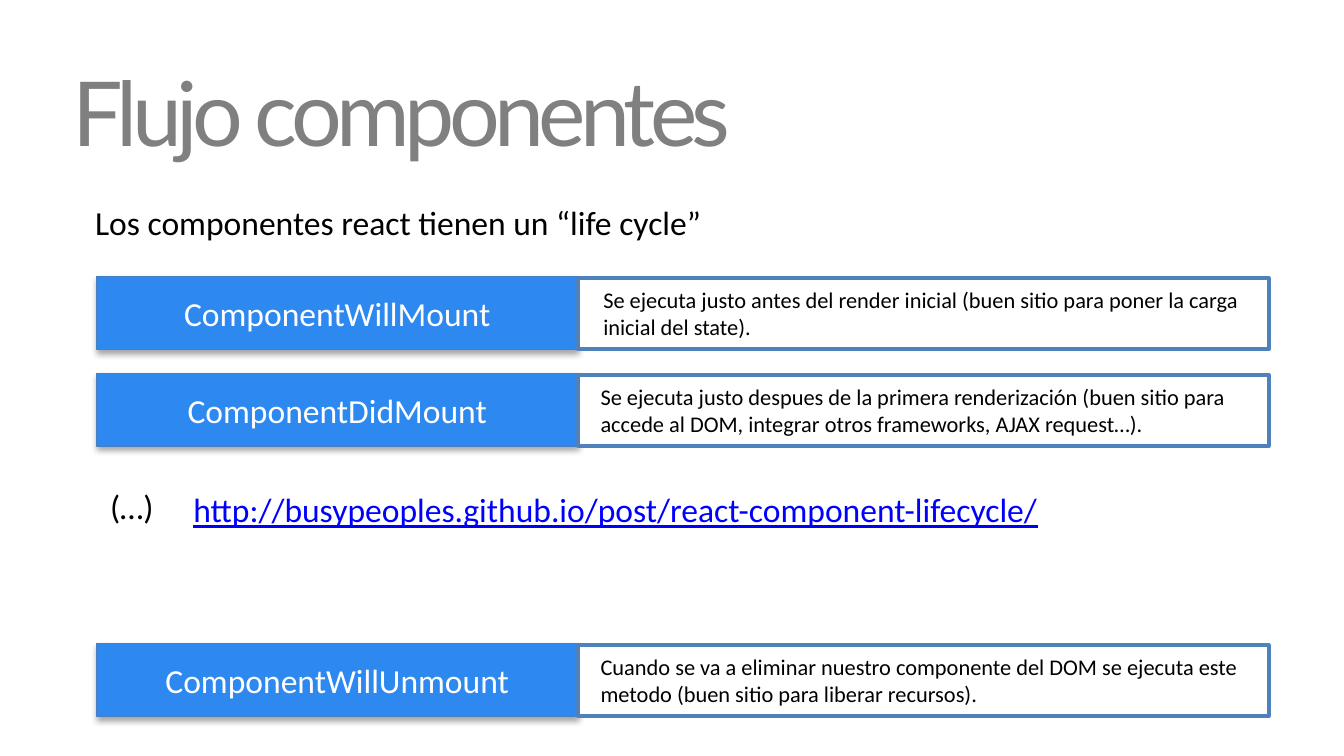
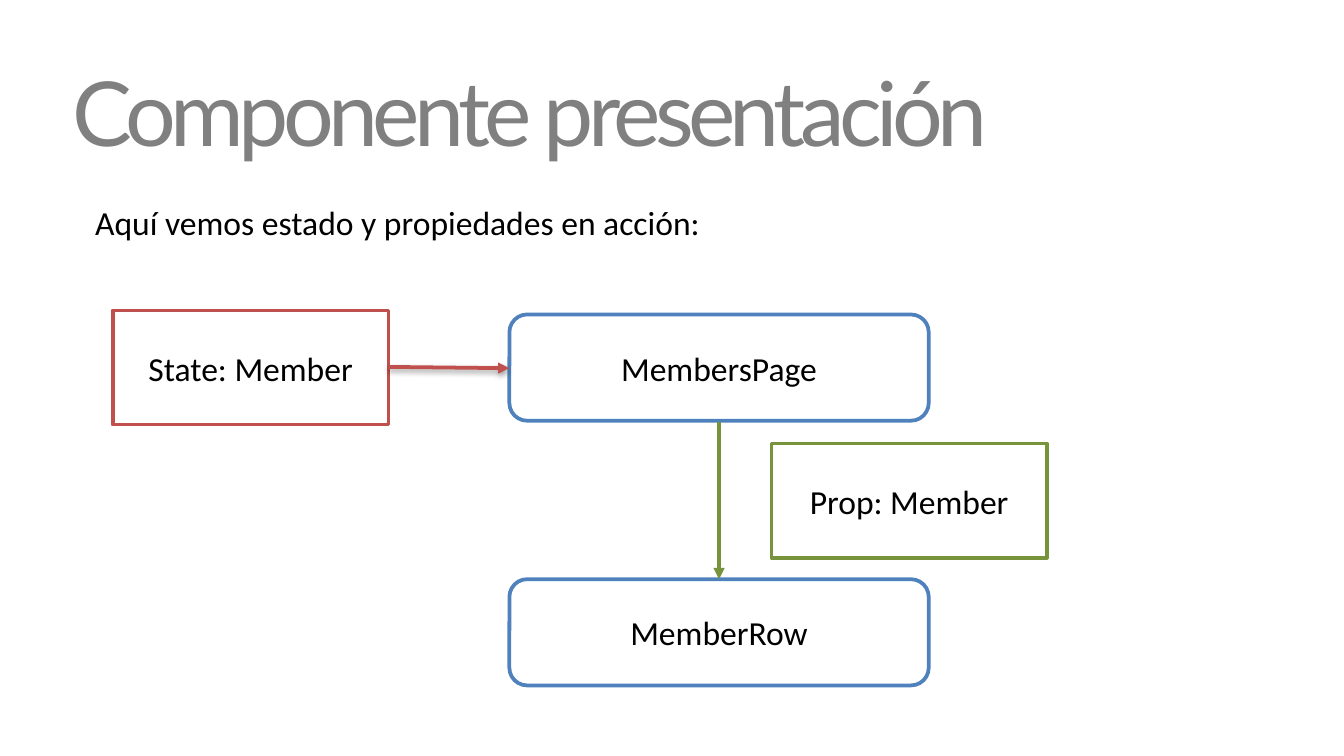
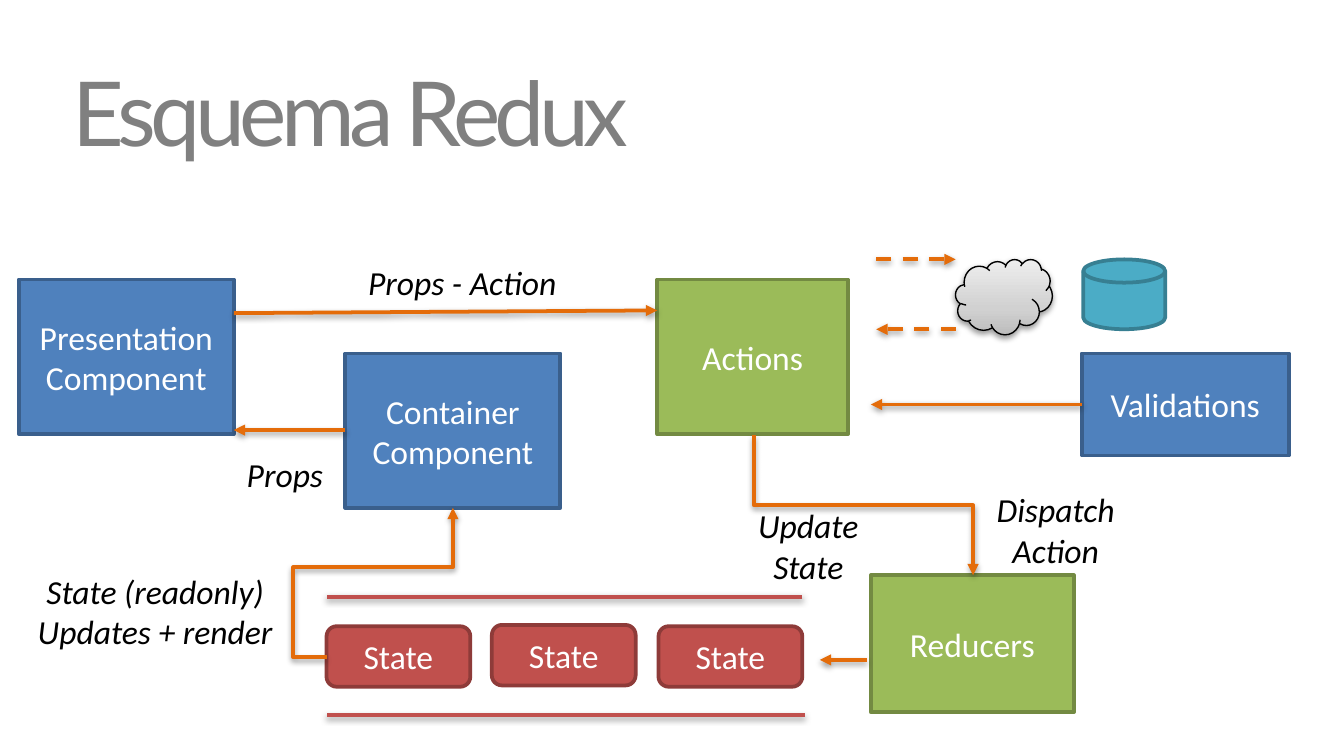
from copy import deepcopy
from dataclasses import dataclass

from lxml import etree
from pptx import Presentation, util as u
from pptx.dml.color import RGBColor
from pptx.enum import dml, shapes, text
from pptx.oxml.ns import qn

PX = u.Inches(0.01)
SLIDE_WIDTH = 1000 * PX
SLIDE_HEIGHT = SLIDE_WIDTH * 9 // 16


@dataclass(frozen=True)
class Theme:
    title_font: str = "Lato"
    body_font: str = "Calibri"
    title_size: int = 48
    body_size: int = 18
    note_size: int = 12
    line_width: float = 2
    thin_line: float = 0.75
    title: str = "808080"
    black: str = "000000"
    white: str = "FFFFFF"
    link: str = "0000FF"
    bright_blue: str = "2D89EF"
    bright_blue_edge: str = "4B7EBC"
    blue: str = "4F81BD"
    blue_edge: str = "3A5F8C"
    green: str = "9BBB59"
    green_edge: str = "738A42"
    dark_green: str = "77933C"
    red: str = "C0504D"
    red_edge: str = "8E3B39"
    teal: str = "4BACC6"
    teal_edge: str = "377F92"
    orange: str = "E46C0A"
    cloud: tuple = ((0, "BDBDBD"), (0.35, "D1D1D1"), (1, "EEEEEE"))


T = Theme()
RECT = shapes.MSO_SHAPE.RECTANGLE
ROUND = shapes.MSO_SHAPE.ROUNDED_RECTANGLE
CENTER = text.PP_ALIGN.CENTER
BOX_SHADOW = (23000, 35000)
LINE_SHADOW = (20000, 38000)

TITLE_BOX = (44, 33, 900, 98)
INTRO_BOX = (61, 145, 894, 40)

# Slide 1: top, left and width of the note, method, note
LIFECYCLE = [
    (206, 439, 495, "ComponentWillMount",
     "Se ejecuta justo antes del render inicial (buen sitio para poner la carga inicial del state)."),
    (278, 437, 508, "ComponentDidMount",
     "Se ejecuta justo despues de la primera renderización (buen sitio para accede al DOM, "
     "integrar otros frameworks, AJAX request…)."),
    (479, 437, 508, "ComponentWillUnmount",
     "Cuando se va a eliminar nuestro componente del DOM se ejecuta este metodo "
     "(buen sitio para liberar recursos)."),
]
METHOD_LEFT, METHOD_WIDTH, NOTE_FRAME_WIDTH, ROW_HEIGHT = 72, 358, 514, 54
LIFECYCLE_URL = "http://busypeoples.github.io/post/react-component-lifecycle/"

# Slide 2: kind, box, edge, label
MEMBER_BOXES = [
    (ROUND, (379, 234, 312, 79), T.blue, "MembersPage"),
    (ROUND, (379, 431, 312, 79), T.blue, "MemberRow"),
    (RECT, (84, 231, 205, 85), T.red, "State: Member"),
    (RECT, (574, 330, 205, 85), T.dark_green, "Prop: Member"),
]

# Slide 3: box, fill, edge, label
REDUX_BLOCKS = [
    ((257, 263, 160, 115), T.blue, T.blue_edge, "Container\nComponent"),
    ((648, 428, 151, 102), T.green, T.green_edge, "Reducers"),
    ((805, 263, 154, 76), T.blue, T.blue_edge, "Validations"),
    ((489, 208, 142, 115), T.green, T.green_edge, "Actions"),
    ((14, 208, 160, 115), T.blue, T.blue_edge, "Presentation\nComponent"),
]
STATE_BOXES = [(243, 466, 107, 45), (366, 465, 107, 45), (490, 466, 107, 45)]
STORE_LINES = [((597, 444), (243, 444)), ((599, 532), (243, 532))]
REDUX_ARROWS = [
    ((174, 233), (489, 231)),
    ((645, 491), (610, 491)),
    ((805, 301), (648, 301)),
    ((257, 320), (174, 320)),
]
SERVER_ARROWS = [((652, 193), (711, 193)), ((711, 245), (652, 245))]
REDUX_LABELS = [
    ((233, 190, 222, 40), "Props - Action"),
    ((13, 420, 205, 71), "State (readonly)\nUpdates + render"),
    ((535, 371, 133, 71), "Update State"),
    ((167, 333, 90, 40), "Props"),
    ((719, 359, 133, 71), "Dispatch Action"),
]


def rgb(color):
    return RGBColor.from_string(color)


def emu(lengths):
    return [int(length * PX) for length in lengths]


def write(frame, content, color, size=T.body_size, font=T.body_font, align=None, italic=None):
    """Fill a text frame, one paragraph for each line of content."""
    frame.word_wrap = True
    frame.text = content
    for paragraph in frame.paragraphs:
        paragraph.alignment = align
        paragraph.font.name = font
        paragraph.font.size = u.Pt(size)
        paragraph.font.color.rgb = rgb(color)
        paragraph.font.italic = italic


def add_text(slide, box, content, color=T.black, **style):
    textbox = slide.shapes.add_textbox(*emu(box))
    write(textbox.text_frame, content, color, **style)
    return textbox.text_frame


def set_shadow(shape, shadow=None):
    """Give the shape a downward shadow of (distance, alpha), or none."""
    effects = etree.SubElement(shape._element.spPr, qn("a:effectLst"))
    if shadow:
        distance, alpha = shadow
        outer = etree.SubElement(effects, qn("a:outerShdw"), blurRad="40000",
                                 dist=str(distance), dir="5400000", rotWithShape="0")
        color = etree.SubElement(outer, qn("a:srgbClr"), val=T.black)
        etree.SubElement(color, qn("a:alpha"), val=str(alpha))


def add_box(slide, kind, box, fill, edge, label="", color=T.white, width=T.line_width, shadow=None):
    shape = slide.shapes.add_shape(kind, *emu(box))
    shape.fill.solid()
    shape.fill.fore_color.rgb = rgb(fill)
    shape.line.color.rgb = rgb(edge)
    shape.line.width = u.Pt(width)
    set_shadow(shape, shadow)
    if label:
        shape.text_frame.vertical_anchor = text.MSO_ANCHOR.MIDDLE
        write(shape.text_frame, label, color, align=CENTER)
    return shape


def add_line(slide, start, end, color, kind=shapes.MSO_CONNECTOR.STRAIGHT,
             arrow=True, dashed=False, shadow=LINE_SHADOW):
    line = slide.shapes.add_connector(kind, *emu(start + end))
    line.line.color.rgb = rgb(color)
    line.line.width = u.Pt(T.line_width)
    if dashed:
        line.line.dash_style = dml.MSO_LINE.DASH
    if arrow:
        etree.SubElement(line.line._get_or_add_ln(), qn("a:tailEnd"), type="triangle")
    set_shadow(line, shadow)
    return line


def add_elbow(slide, start, end, color, adjustments=(), vertical=False):
    """Add a bent arrow; a vertical one leaves its start downwards."""
    if vertical:
        center_x, center_y = (start[0] + end[0]) / 2, (start[1] + end[1]) / 2
        half_x, half_y = (end[0] - start[0]) / 2, (end[1] - start[1]) / 2
        start = (center_x + half_y, center_y - half_x)
        end = (center_x - half_y, center_y + half_x)
    elbow = add_line(slide, start, end, color, shapes.MSO_CONNECTOR.ELBOW)
    properties = elbow._element.spPr
    if vertical:
        properties.find(qn("a:xfrm")).set("rot", str(270 * 60000))
    if adjustments:
        geometry = properties.find(qn("a:prstGeom"))
        geometry.set("prst", f"bentConnector{len(adjustments) + 2}")
        guides = geometry.find(qn("a:avLst"))
        for number, value in enumerate(adjustments, 1):
            etree.SubElement(guides, qn("a:gd"), name=f"adj{number}", fmla=f"val {value}")


def add_cloud(slide, box):
    cloud = add_box(slide, shapes.MSO_SHAPE.CLOUD, box, T.white, T.black,
                    width=T.thin_line, shadow=LINE_SHADOW)
    cloud.fill.gradient()
    cloud.fill.gradient_angle = 90
    stops = cloud._element.spPr.find(".//" + qn("a:gsLst"))
    stops.append(deepcopy(stops[0]))
    for stop, (position, color) in zip(cloud.fill.gradient_stops, T.cloud):
        stop.position = position
        stop.color.rgb = rgb(color)


def add_slide(presentation, title, intro=""):
    slide = presentation.slides.add_slide(presentation.slide_layouts[6])
    frame = add_text(slide, TITLE_BOX, title, T.title, size=T.title_size, font=T.title_font)
    frame.vertical_anchor = text.MSO_ANCHOR.MIDDLE
    frame.paragraphs[0].runs[0].font._element.set("spc", "-300")
    if intro:
        add_text(slide, INTRO_BOX, intro)
    return slide


def build_lifecycle(presentation):
    slide = add_slide(presentation, "Flujo componentes",
                      "Los componentes react tienen un “life cycle”")
    for top, note_left, note_width, method, note in LIFECYCLE:
        add_box(slide, RECT, (METHOD_LEFT, top, METHOD_WIDTH, ROW_HEIGHT), T.bright_blue,
                T.bright_blue_edge, method, width=T.thin_line, shadow=BOX_SHADOW)
        add_box(slide, RECT, (METHOD_LEFT + METHOD_WIDTH, top + 1, NOTE_FRAME_WIDTH, ROW_HEIGHT - 1),
                T.white, T.blue)
        add_text(slide, (note_left, top + 2, note_width, 50), note, size=T.note_size)
    add_text(slide, (72, 357, 231, 40), "(…)")
    link = add_text(slide, (134, 359, 679, 40), LIFECYCLE_URL, T.link)
    link.paragraphs[0].font.underline = True


def build_members(presentation):
    slide = add_slide(presentation, "Componente presentación",
                      "Aquí vemos estado y propiedades en acción:")
    for kind, box, edge, label in MEMBER_BOXES:
        add_box(slide, kind, box, T.white, edge, label, T.black)
    add_line(slide, (289, 273), (379, 274), T.red)
    add_line(slide, (535, 314), (535, 431), T.dark_green, shadow=None)


def build_redux(presentation):
    slide = add_slide(presentation, "Esquema Redux")
    for box, fill, edge, label in REDUX_BLOCKS:
        add_box(slide, RECT, box, fill, edge, label)
    for start, end in STORE_LINES:
        add_line(slide, start, end, T.red, arrow=False)
    for box in STATE_BOXES:
        add_box(slide, ROUND, box, T.red, T.red_edge, "State")
    add_cloud(slide, (711, 193, 72, 56))
    add_box(slide, shapes.MSO_SHAPE.FLOWCHART_MAGNETIC_DISK, (806, 193, 61, 52), T.teal, T.teal_edge)
    for start, end in REDUX_ARROWS:
        add_line(slide, start, end, T.orange)
    for start, end in SERVER_ARROWS:
        add_line(slide, start, end, T.orange, dashed=True)
    add_elbow(slide, (243, 489), (337, 378), T.orange, adjustments=(-26400, 60200))
    add_elbow(slide, (561, 324), (724, 428), T.orange, vertical=True)
    for box, label in REDUX_LABELS:
        add_text(slide, box, label, align=CENTER, italic=True)


def main():
    presentation = Presentation()
    presentation.slide_width, presentation.slide_height = SLIDE_WIDTH, SLIDE_HEIGHT
    build_lifecycle(presentation)
    build_members(presentation)
    build_redux(presentation)
    presentation.save("out.pptx")


if __name__ == "__main__":
    main()
